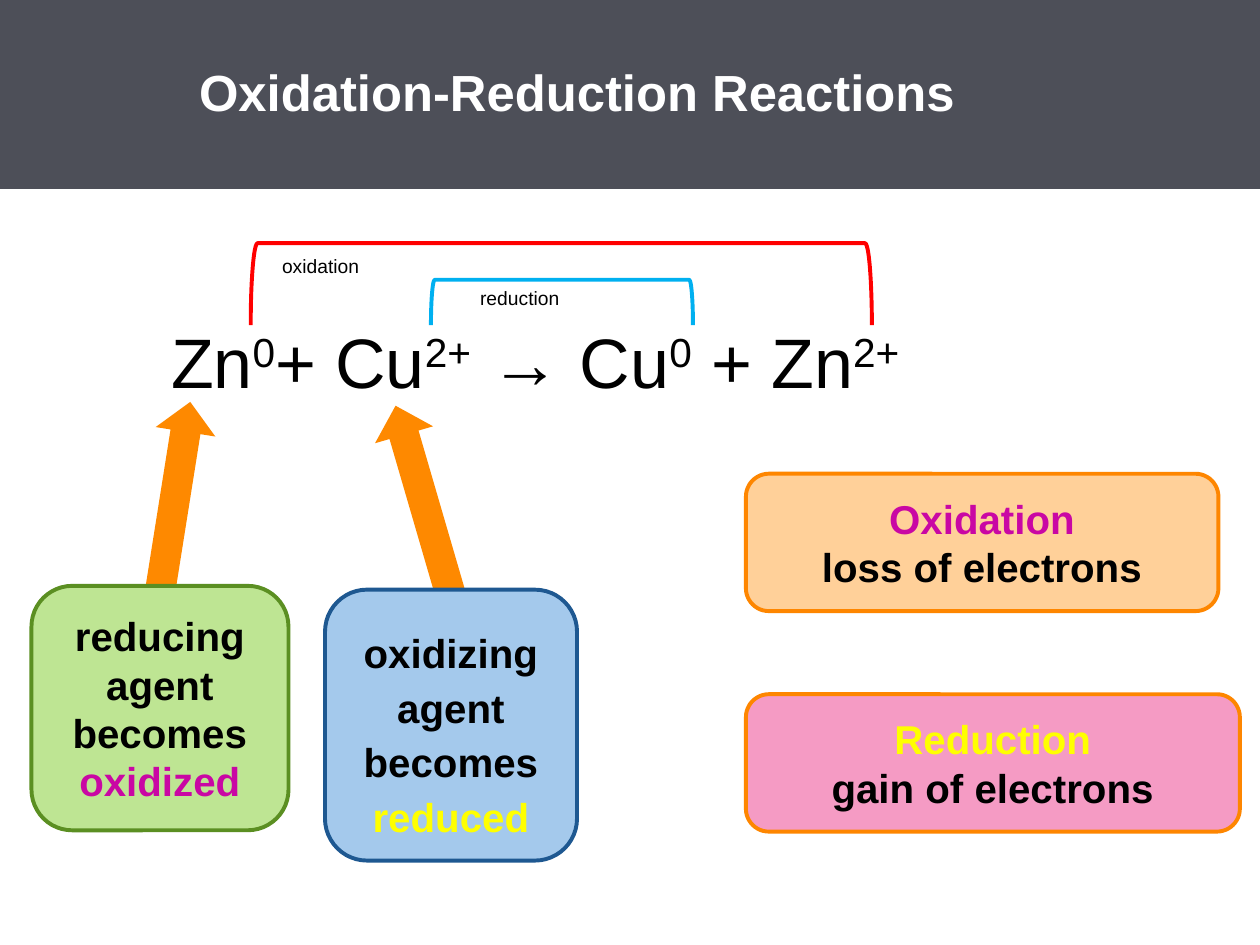
from dataclasses import dataclass
from math import atan2, degrees, hypot

from pptx import Presentation
from pptx.dml.color import RGBColor
from pptx.enum.shapes import MSO_SHAPE
from pptx.enum.text import MSO_ANCHOR, PP_ALIGN
from pptx.util import Inches, Pt

COLUMNS, ROWS = 100, 75
SLIDE_WIDTH, SLIDE_HEIGHT = Inches(10), Inches(7.5)
CELL = SLIDE_WIDTH // COLUMNS  # grid cells are square


@dataclass(frozen=True)
class Theme:
    font: str = "Arial"
    title_size: float = 29
    equation_size: float = 40
    card_size: float = 23
    label_size: float = 11
    outline: float = 2.25
    banner: str = "4D4F58"
    white: str = "FFFFFF"
    black: str = "000000"
    oxidation: str = "C907A4"
    reduction: str = "FFFF00"
    arrow: str = "FE8900"
    card_line: str = "FE8600"
    peach: str = "FFD099"
    pink: str = "F59BC4"
    green: str = "BEE593"
    green_line: str = "5B8F22"
    blue: str = "A4C9EC"
    blue_line: str = "1E5891"
    red_bracket: str = "FF0000"
    blue_bracket: str = "00B0F0"


THEME = Theme()


def cells(*counts):
    return [round(count * CELL) for count in counts]


def rgb(code):
    return RGBColor.from_string(code)


def set_font(font, size, color=None, bold=False):
    font.name, font.size, font.bold = THEME.font, Pt(size), bold
    if color:
        font.color.rgb = rgb(color)


def set_insets(frame, left, top, right, bottom):
    frame.margin_left, frame.margin_top, frame.margin_right, frame.margin_bottom = cells(
        left, top, right, bottom)


def add_figure(slide, kind, box, fill=None, line=None):
    figure = slide.shapes.add_shape(kind, *cells(*box))
    figure.shadow.inherit = False
    if fill:
        figure.fill.solid()
        figure.fill.fore_color.rgb = rgb(fill)
    else:
        figure.fill.background()
    if line:
        figure.line.color.rgb = rgb(line)
        figure.line.width = Pt(THEME.outline)
    else:
        figure.line.fill.background()
    return figure


def add_banner(slide, box, text):
    title = slide.shapes.title
    title.left, title.top, title.width, title.height = cells(*box)
    title.fill.solid()
    title.fill.fore_color.rgb = rgb(THEME.banner)
    frame = title.text_frame
    frame.text = text
    frame.vertical_anchor = MSO_ANCHOR.MIDDLE
    set_insets(frame, 15.8, 1.4, 3.5, 1.4)
    heading = frame.paragraphs[0]
    heading.alignment = PP_ALIGN.LEFT
    heading.line_spacing = 0.95
    set_font(heading.font, THEME.title_size, THEME.white, True)


def add_card(slide, box, fill, line, paragraphs, anchor=MSO_ANCHOR.MIDDLE,
             top_inset=1, spacing=None):
    """Rounded card; each paragraph is a list of (text, color) runs."""
    card = add_figure(slide, MSO_SHAPE.ROUNDED_RECTANGLE, box, fill, line)
    frame = card.text_frame
    frame.word_wrap = True
    frame.vertical_anchor = anchor
    set_insets(frame, 2, top_inset, 2, 1)
    for index, runs in enumerate(paragraphs):
        paragraph = frame.add_paragraph() if index else frame.paragraphs[0]
        paragraph.alignment = PP_ALIGN.CENTER
        paragraph.line_spacing = spacing
        set_font(paragraph.font, THEME.card_size, bold=True)
        for text, color in runs:
            run = paragraph.add_run()
            run.text = text
            run.font.color.rgb = rgb(color)


def add_block_arrow(slide, tail, tip, thickness=4.8):
    across, down = tip[0] - tail[0], tip[1] - tail[1]
    length = hypot(across, down)
    box = ((tail[0] + tip[0] - length) / 2, (tail[1] + tip[1] - thickness) / 2,
           length, thickness)
    arrow = add_figure(slide, MSO_SHAPE.RIGHT_ARROW, box, THEME.arrow)
    arrow.rotation = degrees(atan2(down, across)) % 360


def add_text(slide, box, size, alignment, wrap=True):
    frame = slide.shapes.add_textbox(*cells(*box)).text_frame
    frame.word_wrap = wrap
    set_insets(frame, 1, 0.5, 1, 0.5)
    paragraph = frame.paragraphs[0]
    paragraph.alignment = alignment
    set_font(paragraph.font, size, THEME.black)
    return paragraph


def add_bracket(slide, box, color, label, label_offset):
    """Bracket open at the bottom that fills the box, with a label below its bar."""
    left, top, width, height = box
    upright = (left + (width - height) / 2, top + (height - width) / 2, height, width)
    bracket = add_figure(slide, MSO_SHAPE.RIGHT_BRACKET, upright, line=color)
    bracket.rotation = 270
    label_box = (left + label_offset[0], top + label_offset[1], 12.5, 2.8)
    add_text(slide, label_box, THEME.label_size, PP_ALIGN.CENTER).text = label


def add_equation(slide, box, terms):
    """Terms are (base text, superscript) pairs."""
    equation = add_text(slide, box, THEME.equation_size, PP_ALIGN.LEFT, wrap=False)
    for base, charge in terms:
        equation.add_run().text = base
        superscript = equation.add_run()
        superscript.text = charge
        superscript.font._element.set("baseline", "30000")


def add_agent(slide, box, tip, fill, line, role, outcome, **layout):
    """Agent card with an arrow from its top to a reactant."""
    left, top, width, _ = box
    add_block_arrow(slide, (left + width / 2, top + 0.5), tip)
    runs = [(f"{role} agent becomes ", THEME.black), outcome]
    add_card(slide, box, fill, line, [runs], **layout)


def add_definition(slide, box, fill, term, meaning):
    add_card(slide, box, fill, THEME.card_line, [[term], [(meaning, THEME.black)]])


def main():
    deck = Presentation()
    deck.slide_width, deck.slide_height = SLIDE_WIDTH, SLIDE_HEIGHT
    slide = deck.slides.add_slide(deck.slide_layouts[5])

    add_banner(slide, (0, 0, COLUMNS, ROWS / 5), "Oxidation-Reduction Reactions")
    add_definition(slide, (59.2, 37.6, 37.5, 10.9), THEME.peach,
                   ("Oxidation", THEME.oxidation), "loss of electrons")
    add_definition(slide, (59.2, 55.1, 39.2, 10.9), THEME.pink,
                   ("Reduction", THEME.reduction), "gain of electrons")
    add_agent(slide, (2.5, 46.5, 20.4, 19.4), (15.1, 31.9), THEME.green,
              THEME.green_line, "reducing", ("oxidized", THEME.oxidation))
    add_agent(slide, (25.8, 46.8, 20, 21.5), (31.4, 32.2), THEME.blue,
              THEME.blue_line, "oxidizing", ("reduced", THEME.reduction),
              anchor=MSO_ANCHOR.TOP, top_inset=1.6, spacing=1.13)
    add_equation(slide, (12.6, 24.8, 61, 7.7),
                 [("Zn", "0"), ("+ Cu", "2+"), (" → Cu", "0"), (" + Zn", "2+")])
    add_bracket(slide, (34.2, 22.2, 20.8, 3.6), THEME.blue_bracket,
                "reduction", (0.8, 0))
    add_bracket(slide, (19.9, 19.3, 49.3, 6.5), THEME.red_bracket,
                "oxidation", (-0.7, 0.4))

    deck.save("out.pptx")


if __name__ == "__main__":
    main()
